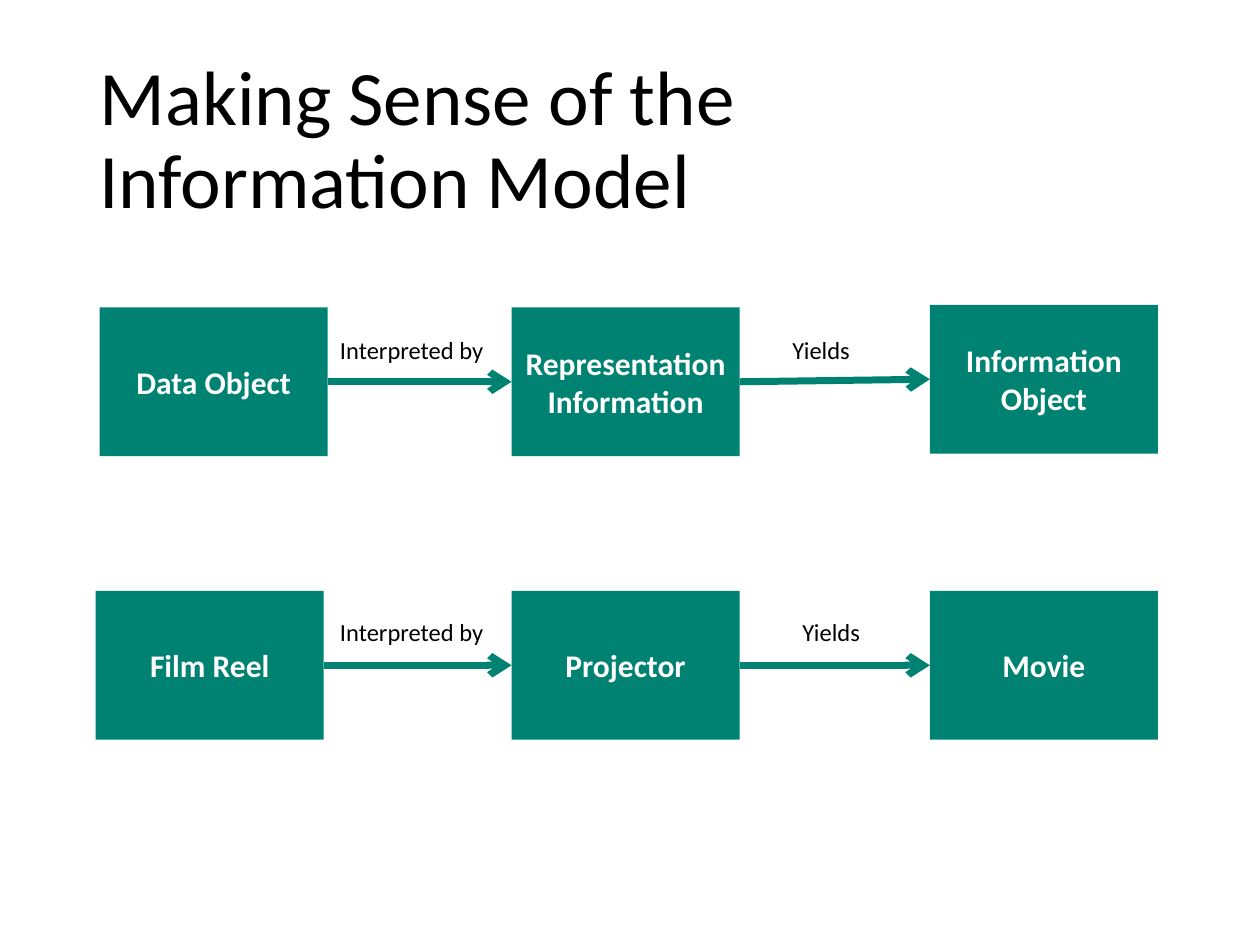
from pptx import Presentation, util as u
from pptx.dml.color import RGBColor
from pptx.enum import shapes, text
from pptx.oxml.ns import qn
from lxml import etree

TEAL = RGBColor(0x00, 0x82, 0x72)
WHITE = RGBColor(0xFF, 0xFF, 0xFF)
BLACK = RGBColor(0x00, 0x00, 0x00)
FONT = "Calibri"

# Grid, in inches
BOX_WIDTH, BOX_HEIGHT = 1.81, 1.18
LABEL_HEIGHT = 0.34
DATA_X, INTERPRETER_X, RESULT_X = 0.79, 4.06, 7.38
MODEL_Y, FILM_Y = 2.44, 4.69
RIGHT_SIDE, LEFT_SIDE = 3, 1  # connection sites of a rectangle

# Each chain: boxes as (wording, left, top), labels as (wording, left, width), label top
CHAINS = [
    ([("Data Object", DATA_X, MODEL_Y),
      ("Representation Information", INTERPRETER_X, MODEL_Y),
      ("Information Object", RESULT_X, MODEL_Y - 0.02)],
     [("Interpreted by", 2.6, 1.46), ("Yields", 6.19, 0.71)], 2.61),
    ([("Film Reel", DATA_X - 0.03, FILM_Y),
      ("Projector", INTERPRETER_X, FILM_Y),
      ("Movie", RESULT_X, FILM_Y)],
     [("Interpreted by", 2.6, 1.46), ("Yields", 6.27, 0.71)], 4.85),
]


def write(frame, wording, size, color, bold=False):
    frame.word_wrap = True
    frame.text = wording
    paragraph = frame.paragraphs[0]
    for run in paragraph.runs:
        run.font.name = FONT
        run.font.size = u.Pt(size)
        run.font.bold = bold
        run.font.color.rgb = color
    return paragraph


def add_text(slide, wording, left, top, width, height, size):
    area = slide.shapes.add_textbox(*map(u.Inches, (left, top, width, height)))
    return area.text_frame, write(area.text_frame, wording, size, BLACK)


def add_box(slide, wording, left, top):
    box = slide.shapes.add_shape(
        shapes.MSO_SHAPE.RECTANGLE,
        *map(u.Inches, (left, top, BOX_WIDTH, BOX_HEIGHT)))
    box.shadow.inherit = False
    box.fill.solid()
    box.fill.fore_color.rgb = TEAL
    box.line.fill.background()
    box.text_frame.vertical_anchor = text.MSO_ANCHOR.MIDDLE
    paragraph = write(box.text_frame, wording, 18, WHITE, bold=True)
    paragraph.alignment = text.PP_ALIGN.CENTER
    return box


def add_arrow(slide, source, target):
    arrow = slide.shapes.add_connector(shapes.MSO_CONNECTOR.STRAIGHT, 0, 0, 0, 0)
    arrow.begin_connect(source, RIGHT_SIDE)
    arrow.end_connect(target, LEFT_SIDE)
    arrow.line.color.rgb = TEAL
    arrow.line.width = u.Pt(4)
    etree.SubElement(arrow.line._get_or_add_ln(), qn("a:tailEnd"), type="arrow")
    etree.SubElement(arrow._element.spPr, qn("a:effectLst"))


def add_chain(slide, steps, labels, label_top):
    boxes = [add_box(slide, *step) for step in steps]
    for source, target in zip(boxes, boxes[1:]):
        add_arrow(slide, source, target)
    for wording, left, width in labels:
        add_text(slide, wording, left, label_top, width, LABEL_HEIGHT, 14)


def main():
    deck = Presentation()
    deck.slide_width, deck.slide_height = u.Inches(10), u.Inches(7.5)
    slide = deck.slides.add_slide(deck.slide_layouts[6])

    # Title
    frame, heading = add_text(slide, "Making Sense of the \vInformation Model",
                              0.69, 0.4, 8.62, 1.45, 44)
    frame.vertical_anchor = text.MSO_ANCHOR.MIDDLE
    heading.line_spacing = 0.9

    # The model, and the film example below it
    for chain in CHAINS:
        add_chain(slide, *chain)

    deck.save("out.pptx")


if __name__ == "__main__":
    main()
